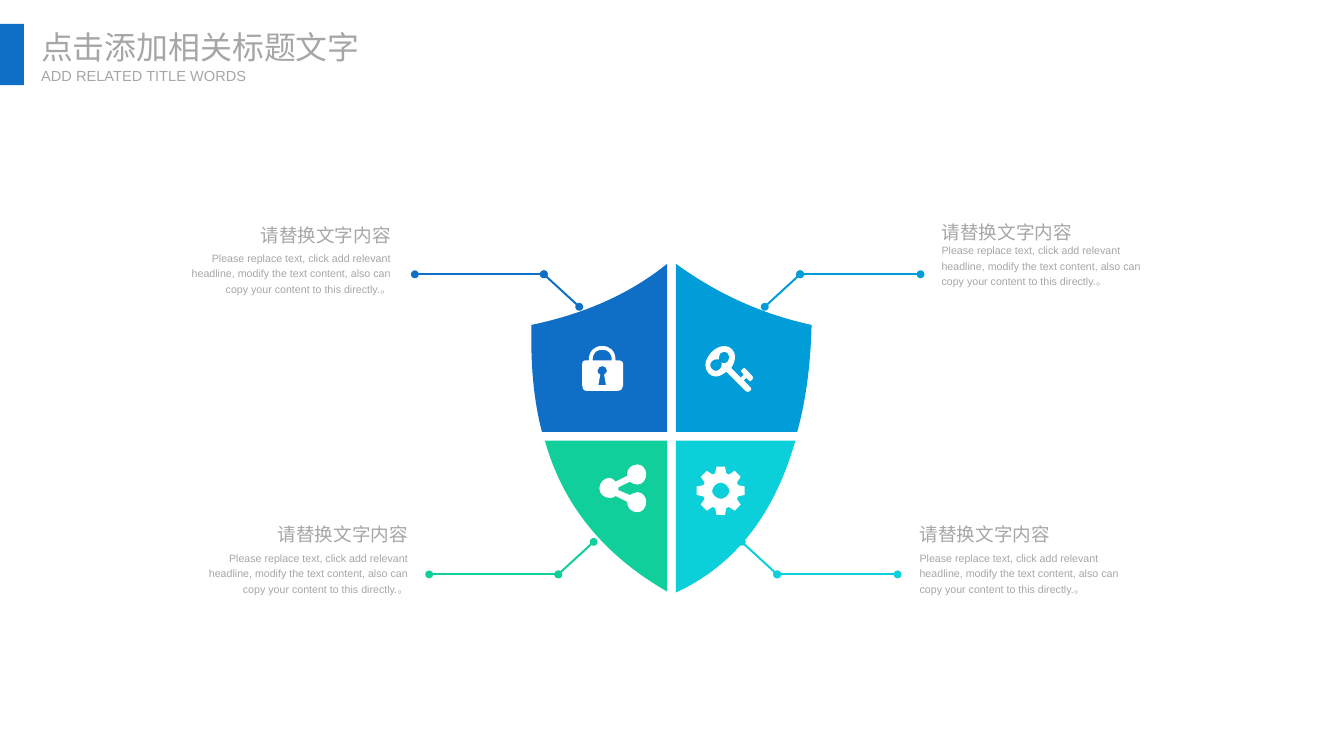
from math import cos, radians, sin

from lxml import etree
from pptx import Presentation
from pptx.dml.color import RGBColor
from pptx.enum.shapes import MSO_CONNECTOR, MSO_SHAPE
from pptx.enum.text import MSO_ANCHOR, MSO_AUTO_SIZE, PP_ALIGN
from pptx.oxml.ns import qn
from pptx.util import Pt

PX = 9144
LEFT, RIGHT = PP_ALIGN.LEFT, PP_ALIGN.RIGHT
TOP, MIDDLE = MSO_ANCHOR.TOP, MSO_ANCHOR.MIDDLE
GROW = MSO_AUTO_SIZE.SHAPE_TO_FIT_TEXT
STRAIGHT = MSO_CONNECTOR.STRAIGHT
RECT = MSO_SHAPE.RECTANGLE

THEME = {
    "blue": "0F6FC6", "sky": "009DD9", "green": "10CF9B", "aqua": "0BD0D9",
    "white": "FFFFFF", "grey": "A6A6A6",
    "latin": "Arial", "asian": "Noto Sans CJK SC",
    "title": 24, "sub": 11, "head": 14, "body": 8, "line": 1.5,
}

deck = Presentation()
deck.slide_width = 1406 * PX
deck.slide_height = 791 * PX
slide = deck.slides.add_slide(deck.slide_layouts[6])
shapes = slide.shapes


def write(words, x, y, w, h, size, font="latin", align=LEFT, anchor=TOP, wrap=False, space=1.2):
    box = shapes.add_textbox(x * PX, y * PX, w * PX, h * PX)
    frame = box.text_frame
    frame.margin_left = frame.margin_top = frame.margin_right = frame.margin_bottom = 0
    frame.word_wrap = wrap
    frame.auto_size = GROW
    frame.vertical_anchor = anchor
    para = frame.paragraphs[0]
    para.alignment = align
    para.line_spacing = space
    run = para.add_run()
    run.text = words
    run.font.size = Pt(THEME[size])
    run.font.name = THEME[font]
    run.font.color.rgb = RGBColor.from_string(THEME["grey"])
    etree.SubElement(run._r.get_or_add_rPr(), qn("a:ea")).set("typeface", THEME["asian"])


def trace(loops, color):
    pen = None
    for loop in loops:
        dots = [(step[-2] * PX, step[-1] * PX) for step in loop]
        if pen is None:
            pen = shapes.build_freeform(*dots[0], scale=1.0)
        else:
            pen.move_to(*dots[0])
        pen.add_line_segments(dots[1:], close=False)
        pen.add_line_segments([], close=True)
    form = pen.convert_to_shape()
    form.shadow.inherit = False
    form.fill.solid()
    form.fill.fore_color.rgb = RGBColor.from_string(THEME[color])
    form.line.fill.background()
    steps = [step for loop in loops for step in loop[1:]]
    for node, step in zip(list(form._element.iter(qn("a:lnTo"))), steps):
        if len(step) == 6:
            node.tag = qn("a:cubicBezTo")
            for spot, n in enumerate((0, 2)):
                grip = etree.Element(qn("a:pt"))
                grip.set("x", str(round(step[n] * PX) - form.left))
                grip.set("y", str(round(step[n + 1] * PX) - form.top))
                node.insert(spot, grip)


lock = [
    [(646, 377), (644, 377), (644, 367, 638, 362, 630, 362), (622, 362, 616, 367, 616, 377),
     (614, 377), (610, 377, 609, 378, 609, 382), (609, 403), (609, 406, 610, 409, 614, 409),
     (646, 409), (650, 409, 652, 406, 652, 403), (652, 382), (652, 378, 650, 377, 646, 377)],
    [(634, 403), (626, 403), (628, 392), (626, 391, 625, 390, 625, 388),
     (625, 385, 628, 383, 630, 383), (633, 383, 635, 385, 635, 388),
     (635, 389, 634, 391, 632, 392)],
    [(620, 377), (620, 368, 625, 366, 630, 366), (635, 366, 640, 368, 640, 377)],
]
key = [
    [(785, 399), (784, 399, 781, 396, 781, 395), (778, 398), (785, 405),
     (785, 406, 786, 406, 786, 407), (786, 409, 784, 410, 782, 410),
     (781, 410, 781, 410, 780, 409), (760, 389), (757, 391, 753, 394, 749, 394),
     (743, 394, 738, 389, 738, 382), (738, 373, 748, 362, 758, 362),
     (764, 362, 769, 367, 769, 373), (769, 378, 767, 382, 765, 385), (775, 395), (778, 392),
     (778, 391, 775, 389, 775, 388), (775, 388, 778, 385, 778, 385), (779, 385),
     (780, 386, 788, 394, 788, 395), (788, 396, 786, 399, 785, 399)],
    [(757, 368), (754, 368, 752, 371, 752, 374), (752, 376), (751, 376, 750, 376, 749, 376),
     (746, 376, 743, 379, 743, 382), (743, 385, 746, 388, 749, 388),
     (752, 388, 755, 385, 755, 382), (755, 379), (755, 379, 756, 380, 757, 380),
     (761, 380, 763, 377, 763, 374), (763, 371, 761, 368, 757, 368)],
]
share = [
    [(676, 525), (676, 531, 672, 536, 667, 536), (660, 536, 656, 531, 656, 525), (644, 519),
     (642, 521, 640, 521, 638, 521), (632, 521, 627, 517, 627, 511),
     (627, 505, 632, 500, 638, 500), (640, 500, 642, 502, 644, 504), (656, 498),
     (656, 497, 656, 497, 656, 496), (656, 491, 660, 486, 667, 486),
     (672, 486, 676, 491, 676, 496), (676, 502, 672, 507, 667, 507),
     (664, 507, 661, 506, 659, 504), (647, 510), (647, 513), (659, 518),
     (661, 517, 664, 515, 667, 515), (672, 515, 676, 520, 676, 525)],
]
tooth = [(-18, 19), (-10, 25.5), (10, 25.5), (18, 19)]
gear = [
    [(754 + r * cos(radians(turn + a)), 513.5 + r * sin(radians(turn + a)))
     for turn in range(0, 360, 45) for a, r in tooth],
    [(754, 505), (750, 505, 745, 509, 745, 514), (745, 518, 750, 522, 754, 522),
     (758, 522, 763, 518, 763, 514), (763, 509, 758, 505, 754, 505)],
]

lock_part = [(556, 340), (614, 328, 661, 306, 698, 276), (698, 452), (567, 452),
             (558, 418, 555, 380, 556, 340)]
key_part = [(834, 452), (707, 452), (707, 276), (751, 308, 798, 329, 849, 340),
            (848, 382, 843, 419, 834, 452)]
share_part = [(698, 461), (698, 619), (632, 581, 589, 529, 570, 461)]
gear_part = [(707, 461), (832, 461), (810, 539, 768, 592, 707, 620)]

parts = [
    ("blue", lock_part, lock, RIGHT, 409, 231, 261, [(606, 321), (569, 287), (434, 287)]),
    ("sky", key_part, key, LEFT, 985, 228, 253, [(800, 321), (837, 287), (963, 287)]),
    ("green", share_part, share, RIGHT, 427, 543, 575, [(621, 567), (584, 601), (449, 601)]),
    ("aqua", gear_part, gear, LEFT, 962, 543, 575, [(776, 567), (813, 601), (939, 601)]),
]
body = ("Please replace text, click add relevant headline, modify the text content, "
        "also can copy your content to this directly.。")

for color, part, icon, align, edge, head_y, body_y, bends in parts:
    trace([part], color)
    trace(icon, "white")
    back = 1 if align == RIGHT else 0
    write(body, edge - 232 * back, body_y, 232, 48, "body", align=align, wrap=True)
    write("请替换文字内容", edge - 137 * back, head_y, 137, 26, "head", align=align, anchor=MIDDLE)
    for (x, y), (end_x, end_y) in zip(bends, bends[1:]):
        wire = shapes.add_connector(STRAIGHT, x * PX, y * PX, end_x * PX, end_y * PX)
        wire.line.width = Pt(THEME["line"])
        wire.line.color.rgb = RGBColor.from_string(THEME[color])
        props = wire._element.spPr
        for tip in ("a:headEnd", "a:tailEnd"):
            etree.SubElement(props.find(qn("a:ln")), qn(tip)).set("type", "oval")
        etree.SubElement(props, qn("a:effectLst"))

tab = shapes.add_shape(RECT, 0, 25 * PX, 25 * PX, 64 * PX)
tab.shadow.inherit = False
tab.fill.solid()
tab.fill.fore_color.rgb = RGBColor.from_string(THEME["blue"])
tab.line.fill.background()
write("点击添加相关标题文字", 43, 29, 337, 40, "title", font="asian", space=1.0)
write("ADD RELATED TITLE WORDS", 43, 70, 218, 19, "sub", space=1.0)

deck.save("out.pptx")
